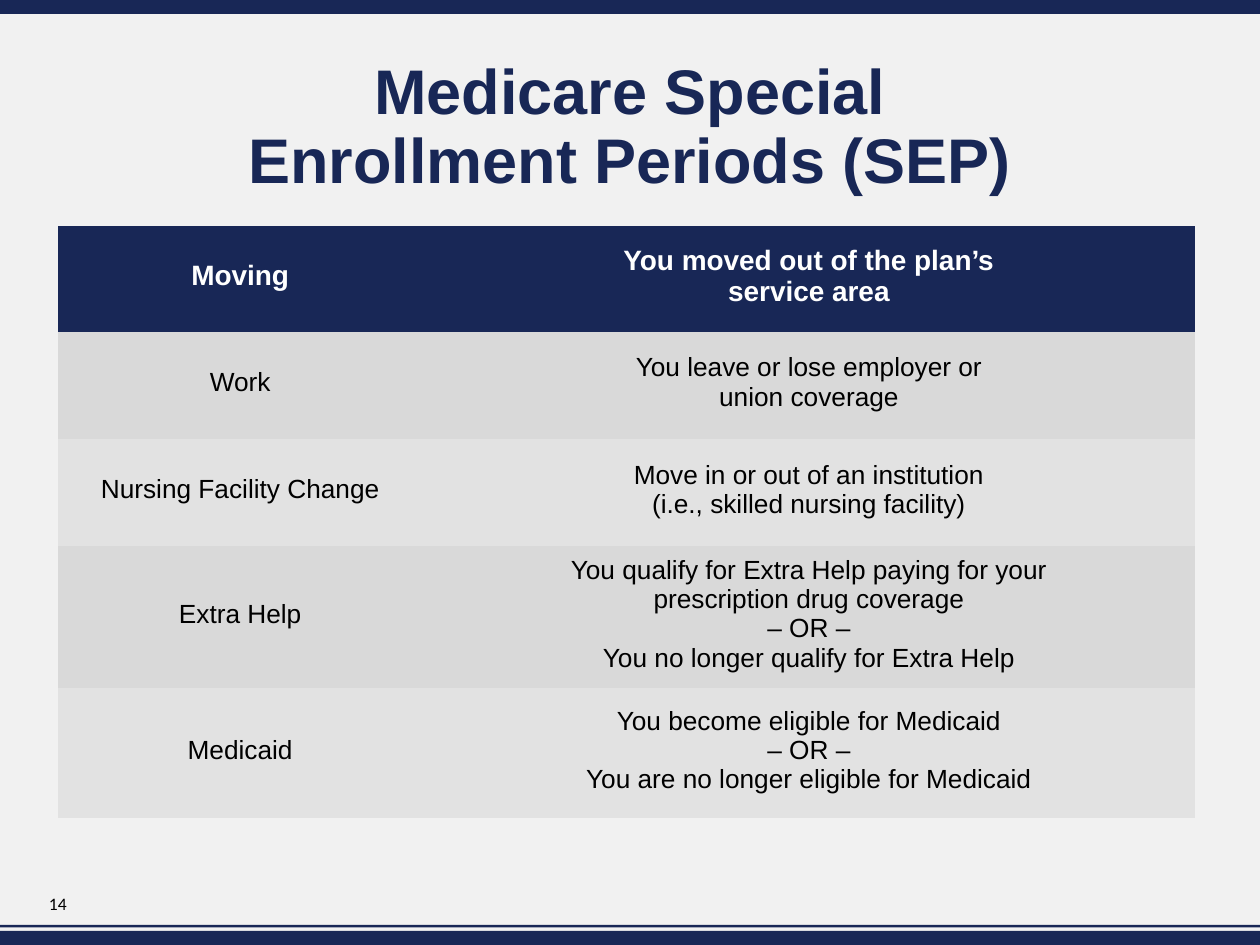
from pptx import Presentation
from pptx.dml.color import RGBColor
from pptx.enum.shapes import MSO_SHAPE
from pptx.enum.text import MSO_ANCHOR, PP_ALIGN
from pptx.util import Pt

RECTANGLE = MSO_SHAPE.RECTANGLE
TOP, MIDDLE = MSO_ANCHOR.TOP, MSO_ANCHOR.MIDDLE
LEFT, CENTER = PP_ALIGN.LEFT, PP_ALIGN.CENTER

SLIDE_WIDTH, SLIDE_HEIGHT = 720, 540
TITLE_ONLY = 5
NO_STYLE_NO_GRID = "{2D5ABB26-0587-4C30-8999-92F81FD0307C}"

COLORS = {
    "background": "F1F1F1",
    "navy": "182756",
    "white": "FFFFFF",
    "black": "000000",
    "dark_band": "D9D9D9",
    "light_band": "E2E2E2",
}

TITLE_FONT = {"name": "Arial", "size": Pt(36), "bold": True}
HEADER_FONT = {"name": "Arial", "size": Pt(16), "bold": True}
BODY_FONT = {"name": "Arial", "size": Pt(15), "bold": False}
NUMBER_FONT = {"name": "Calibri", "size": Pt(10)}

# \v breaks a line, \n starts a paragraph
TITLE = "Medicare Special\vEnrollment Periods (SEP)"
PERIODS = [
    ("Moving", "You moved out of the plan’s\vservice area"),
    ("Work", "You leave or lose employer or\vunion coverage"),
    ("Nursing Facility Change",
     "Move in or out of an institution\v(i.e., skilled nursing facility)"),
    ("Extra Help",
     "You qualify for Extra Help paying for your\nprescription drug coverage\n"
     "– OR –\nYou no longer qualify for Extra Help"),
    ("Medicaid",
     "You become eligible for Medicaid\n– OR –\n"
     "You are no longer eligible for Medicaid"),
]
COLUMN_WIDTHS = [238.5, 411.5]
ROW_HEIGHTS = [60.5, 61, 61.5, 81, 74.5]


def rgb(color):
    return RGBColor.from_string(COLORS[color])


def set_attributes(target, values):
    for attribute, value in values.items():
        setattr(target, attribute, value)


def set_margins(target, left=0, top=0, right=0, bottom=0):
    set_attributes(target, {
        "margin_left": Pt(left), "margin_top": Pt(top),
        "margin_right": Pt(right), "margin_bottom": Pt(bottom),
    })


def format_text(frame, font, color, alignment, line_spacing=None):
    for paragraph in frame.paragraphs:
        paragraph.alignment = alignment
        if line_spacing:
            paragraph.line_spacing = Pt(line_spacing)
        for run in paragraph.runs:
            set_attributes(run.font, font)
            run.font.color.rgb = rgb(color)


def add_bar(slide, top, height):
    """Draw a navy bar across the full slide width."""
    bar = slide.shapes.add_shape(
        RECTANGLE, 0, Pt(top), Pt(SLIDE_WIDTH), Pt(height))
    bar.shadow.inherit = False
    bar.fill.solid()
    bar.fill.fore_color.rgb = rgb("navy")
    bar.line.fill.background()


def add_title(slide):
    title = slide.shapes.title
    set_attributes(title, {
        "left": Pt(55), "top": Pt(28), "width": Pt(610), "height": Pt(98)})
    frame = title.text_frame
    frame.text = TITLE
    frame.vertical_anchor = TOP
    set_margins(frame, top=6)
    format_text(frame, TITLE_FONT, "navy", CENTER, line_spacing=38.9)


def fill_cell(cell, text, fill, font, color):
    cell.text = text
    cell.fill.solid()
    cell.fill.fore_color.rgb = rgb(fill)
    cell.vertical_anchor = MIDDLE
    set_margins(cell, right=30, bottom=3.5)
    format_text(cell.text_frame, font, color, CENTER)


def add_period_table(slide):
    table = slide.shapes.add_table(
        len(PERIODS), len(COLUMN_WIDTHS), Pt(33), Pt(129.25),
        Pt(sum(COLUMN_WIDTHS)), Pt(sum(ROW_HEIGHTS))).table
    table._tbl.tblPr[0].text = NO_STYLE_NO_GRID
    for column, width in zip(table.columns, COLUMN_WIDTHS):
        column.width = Pt(width)
    for index, (period, height) in enumerate(zip(PERIODS, ROW_HEIGHTS)):
        row = table.rows[index]
        row.height = Pt(height)
        if index == 0:
            look = ("navy", HEADER_FONT, "white")
        else:
            band = "dark_band" if index % 2 else "light_band"
            look = (band, BODY_FONT, "black")
        for cell, text in zip(row.cells, period):
            fill_cell(cell, text, *look)


def add_page_number(slide, number):
    frame = slide.shapes.add_textbox(
        Pt(25), Pt(512), Pt(16), Pt(12)).text_frame
    frame.text = number
    frame.word_wrap = True
    set_margins(frame, left=3)
    format_text(frame, NUMBER_FONT, "black", LEFT, line_spacing=10.4)


def main():
    presentation = Presentation()
    presentation.slide_width = Pt(SLIDE_WIDTH)
    presentation.slide_height = Pt(SLIDE_HEIGHT)
    slide = presentation.slides.add_slide(
        presentation.slide_layouts[TITLE_ONLY])
    slide.background.fill.solid()
    slide.background.fill.fore_color.rgb = rgb("background")

    for top, height in [(0, 8), (528.5, 1.5), (532, 8)]:
        add_bar(slide, top, height)
    add_title(slide)
    add_period_table(slide)
    add_page_number(slide, "14")
    presentation.save("out.pptx")


if __name__ == "__main__":
    main()
